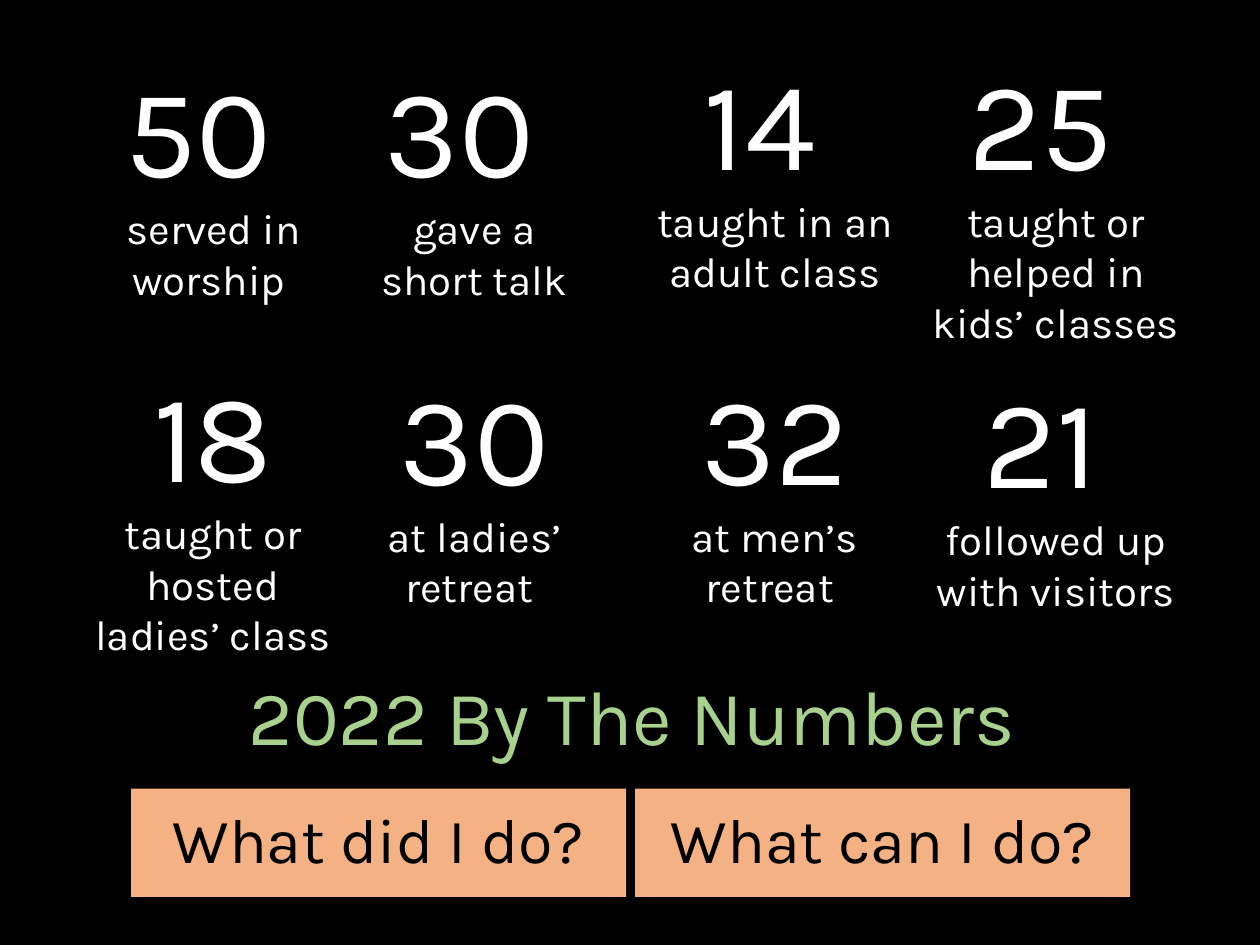
from pptx import Presentation
from pptx.dml.color import RGBColor
from pptx.enum.shapes import MSO_SHAPE
from pptx.enum.text import MSO_ANCHOR, PP_ALIGN
from pptx.util import Inches, Pt

BLACK = RGBColor(0x00, 0x00, 0x00)
WHITE = RGBColor(0xFF, 0xFF, 0xFF)
GREEN = RGBColor(0xA9, 0xD1, 0x8E)
ORANGE = RGBColor(0xF4, 0xB1, 0x83)
CENTER = PP_ALIGN.CENTER
MIDDLE = MSO_ANCHOR.MIDDLE
RECTANGLE = MSO_SHAPE.RECTANGLE

NUMBER = {"size": Pt(72), "name": "Karla"}
LABEL = {"size": Pt(24), "name": "Karla"}
TITLE = {"size": Pt(44), "name": "Karla"}
QUESTION = {"size": Pt(36), "name": "Karla"}

STATS = [
    ("50 ", "served in worship ", (0.7, 0.36, 1.99, 2.12)),
    ("30 ", "gave a short talk", (2.77, 0.36, 1.99, 2.12)),
    ("14 ", "taught in an adult class", (5, 0.3, 2.3, 2.12)),
    ("25 ", "taught or helped in kids’ classes", (7.23, 0.3, 2.3, 2.52)),
    ("18", "taught or hosted ladies’ class", (0.54, 2.78, 2.3, 2.52)),
    ("30", "at ladies’ retreat ", (2.85, 2.8, 1.83, 2.12)),
    ("32", "at men’s retreat ", (5, 2.8, 2.3, 2.12)),
    ("21 ", "followed up with visitors", (7.23, 2.83, 2.3, 2.12)),
]
QUESTIONS = ["What did I do?", "What can I do?"]


def write(p, text, style, color):
    p.alignment = CENTER
    r = p.add_run()
    r.text = text
    for name, value in style.items():
        setattr(r.font, name, value)
    r.font.color.rgb = color


def add_stat(s, box, number, label):
    tf = s.shapes.add_textbox(*map(Inches, box)).text_frame
    tf.word_wrap = True
    write(tf.paragraphs[0], number, NUMBER, WHITE)
    write(tf.add_paragraph(), label, LABEL, WHITE)


def add_title(s, box, text):
    tf = s.shapes.add_textbox(*map(Inches, box)).text_frame
    tf.word_wrap = True
    tf.vertical_anchor = MIDDLE
    tf.paragraphs[0].line_spacing = 0.9
    write(tf.paragraphs[0], text, TITLE, GREEN)


def add_questions(s, box, questions, gap=0.07):
    left, top, width, height = box
    w = (width - gap * (len(questions) - 1)) / len(questions)
    for i, question in enumerate(questions):
        place = (left + i * (w + gap), top, w, height)
        sp = s.shapes.add_shape(RECTANGLE, *map(Inches, place))
        sp.shadow.inherit = False
        sp.fill.solid()
        sp.fill.fore_color.rgb = ORANGE
        sp.line.fill.background()
        tf = sp.text_frame
        tf.word_wrap = True
        tf.vertical_anchor = MIDDLE
        tf.paragraphs[0].line_spacing = 0.9
        write(tf.paragraphs[0], question, QUESTION, BLACK)


def main():
    prs = Presentation()
    prs.slide_width = Inches(10)
    prs.slide_height = Inches(7.5)
    s = prs.slides.add_slide(prs.slide_layouts[6])
    s.background.fill.solid()
    s.background.fill.fore_color.rgb = BLACK
    for number, label, box in STATS:
        add_stat(s, box, number, label)
    add_title(s, (0.71, 5.29, 8.62, 0.86), "2022 By The Numbers")
    add_questions(s, (1.04, 6.26, 7.93, 0.86), QUESTIONS)
    prs.save("out.pptx")


if __name__ == "__main__":
    main()
